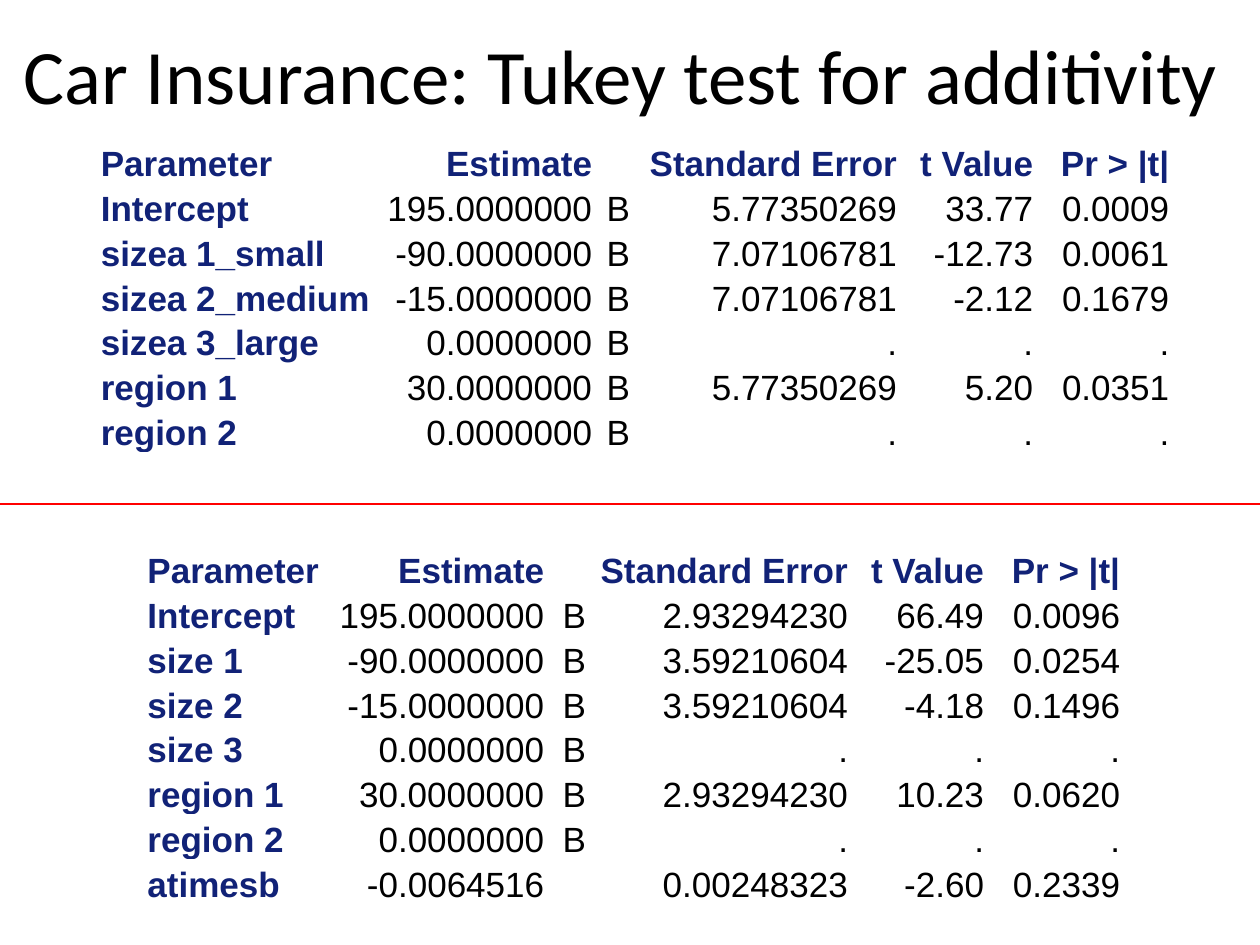
import pptx
import pptx.util
import pptx.dml.color
import pptx.enum.shapes
import pptx.enum.text
import pptx.oxml.ns
import lxml.etree

Inches, Pt = pptx.util.Inches, pptx.util.Pt
ALIGN = pptx.enum.text.PP_ALIGN
MIDDLE = pptx.enum.text.MSO_ANCHOR.MIDDLE

HEADER = ["Parameter", "Estimate", "", "Standard Error", "t Value", "Pr > |t|"]
ADDITIVE_ROWS = [
    HEADER,
    ["Intercept", "195.0000000", "B", "5.77350269", "33.77", "0.0009"],
    ["sizea 1_small", "-90.0000000", "B", "7.07106781", "-12.73", "0.0061"],
    ["sizea 2_medium", "-15.0000000", "B", "7.07106781", "-2.12", "0.1679"],
    ["sizea 3_large", "0.0000000", "B", ".", ".", "."],
    ["region 1", "30.0000000", "B", "5.77350269", "5.20", "0.0351"],
    ["region 2", "0.0000000", "B", ".", ".", "."],
]
TUKEY_ROWS = [
    HEADER,
    ["Intercept", "195.0000000", "B", "2.93294230", "66.49", "0.0096"],
    ["size 1", "-90.0000000", "B", "3.59210604", "-25.05", "0.0254"],
    ["size 2", "-15.0000000", "B", "3.59210604", "-4.18", "0.1496"],
    ["size 3", "0.0000000", "B", ".", ".", "."],
    ["region 1", "30.0000000", "B", "2.93294230", "10.23", "0.0620"],
    ["region 2", "0.0000000", "B", ".", ".", "."],
    ["atimesb", "-0.0064516", "", "0.00248323", "-2.60", "0.2339"],
]
CELL_FORMAT = {
    "margin_left": Inches(0.05), "margin_right": Inches(0.05),
    "margin_top": 0, "margin_bottom": 0, "vertical_anchor": MIDDLE,
}
PARAGRAPH_FORMAT = {"line_spacing": 1.15, "space_before": Pt(5), "space_after": Pt(5)}


def apply(target, values):
    """Set each attribute in values on target."""
    for name, value in values.items():
        setattr(target, name, value)


def set_color(color, hex_value):
    """Set a colour format from a hex string."""
    color.rgb = pptx.dml.color.RGBColor.from_string(hex_value)


def write(p, text, font, color):
    """Add one formatted run to a paragraph."""
    r = p.add_run()
    r.text = text
    apply(r.font, font)
    set_color(r.font.color, color)


def add_title(s, left, top, width, height, text):
    """Place the title placeholder in its box and fill it."""
    sp = s.shapes.title
    apply(sp, {"left": left, "top": top, "width": width, "height": height})
    tf = sp.text_frame
    apply(tf, {"word_wrap": True, "vertical_anchor": MIDDLE})
    p = tf.paragraphs[0]
    p.alignment = ALIGN.CENTER
    write(p, text, {"name": "Calibri", "size": Pt(44)}, "000000")


def add_divider(s, left, top, width):
    """Draw the red rule between the two tables."""
    line = s.shapes.add_connector(
        pptx.enum.shapes.MSO_CONNECTOR.STRAIGHT, left, top, left + width, top)
    line.line.width = Pt(0.75)
    set_color(line.line.color, "FF0000")
    lxml.etree.SubElement(line._element.spPr, pptx.oxml.ns.qn("a:effectLst"))


def add_estimates(s, left, top, height, widths, rows):
    """Add a table of parameter estimates whose rows grow to fit their text."""
    frame = s.shapes.add_table(
        len(rows), len(widths), left, top, Inches(sum(widths)), height)
    table = frame.table
    apply(table, {"first_row": False, "horz_banding": False})
    for column, width in zip(table.columns, widths):
        column.width = Inches(width)
    for i, values in enumerate(rows):
        table.rows[i].height = 0
        for j, text in enumerate(values):
            cell = table.cell(i, j)
            cell.fill.background()
            apply(cell, CELL_FORMAT)
            if not text:
                continue
            heading = i == 0 or j == 0
            p = cell.text_frame.paragraphs[0]
            apply(p, PARAGRAPH_FORMAT)
            p.alignment = ALIGN.RIGHT if j else ALIGN.LEFT
            write(p, text, {"name": "Arial", "size": Pt(20), "bold": heading},
                  "112277" if heading else "000000")
    frame.height = height


def main():
    """Build the slide and save it."""
    prs = pptx.Presentation()
    apply(prs, {"slide_width": Inches(10), "slide_height": Inches(7.5)})
    s = prs.slides.add_slide(prs.slide_layouts[5])
    add_title(s, 0, 0, prs.slide_width, Inches(1.17),
              "Car Insurance: Tukey test for additivity ")
    add_divider(s, 0, Inches(4), prs.slide_width)
    add_estimates(s, Inches(1.12), Inches(4.33), Inches(3.07),
                  [1.5, 1.75, 0.33, 2.08, 1.08, 1.08], TUKEY_ROWS)
    add_estimates(s, Inches(0.75), Inches(1.1), Inches(2.68),
                  [2.25, 1.75, 0.3, 2.12, 1.08, 1.08], ADDITIVE_ROWS)
    prs.save("out.pptx")


if __name__ == "__main__":
    main()
